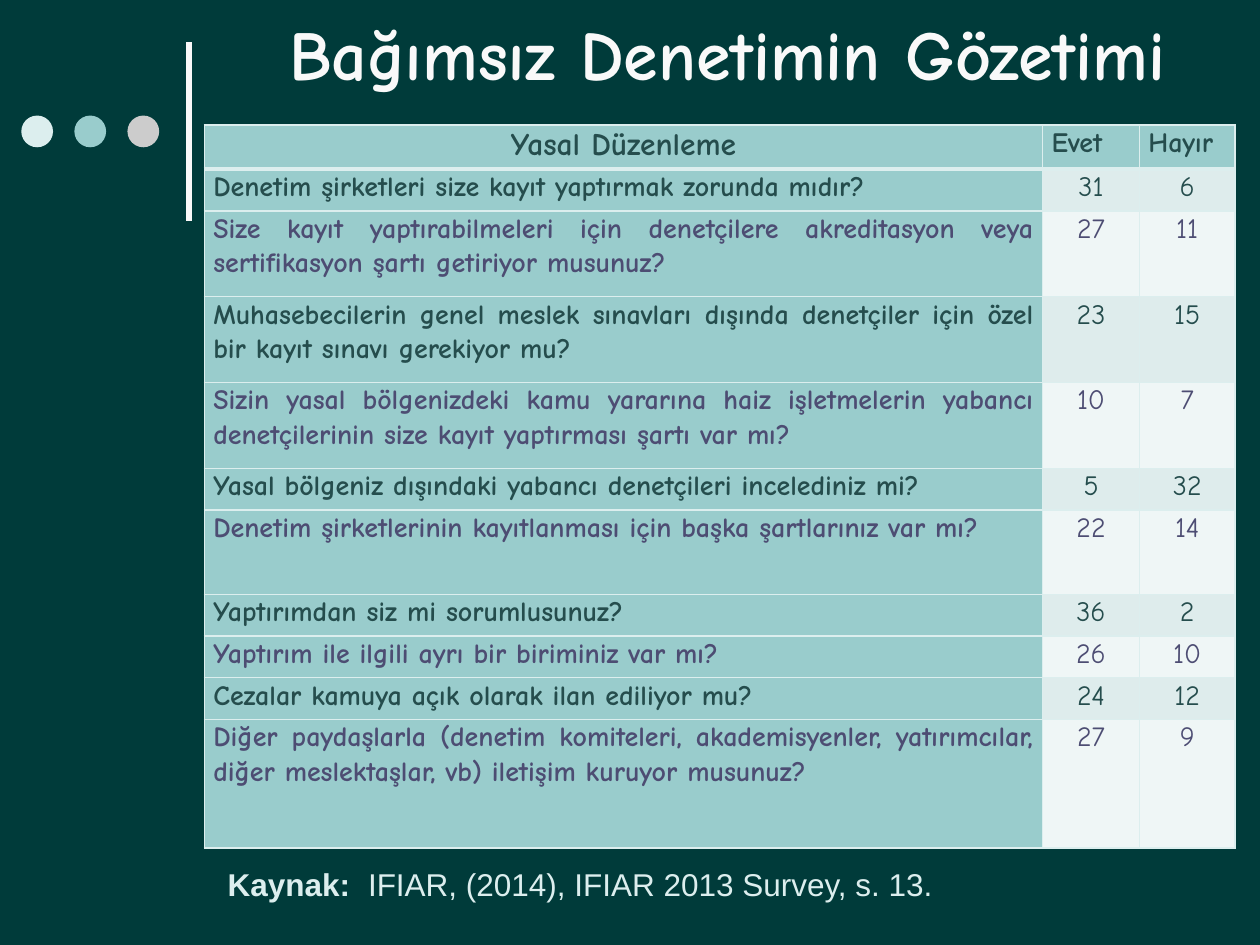
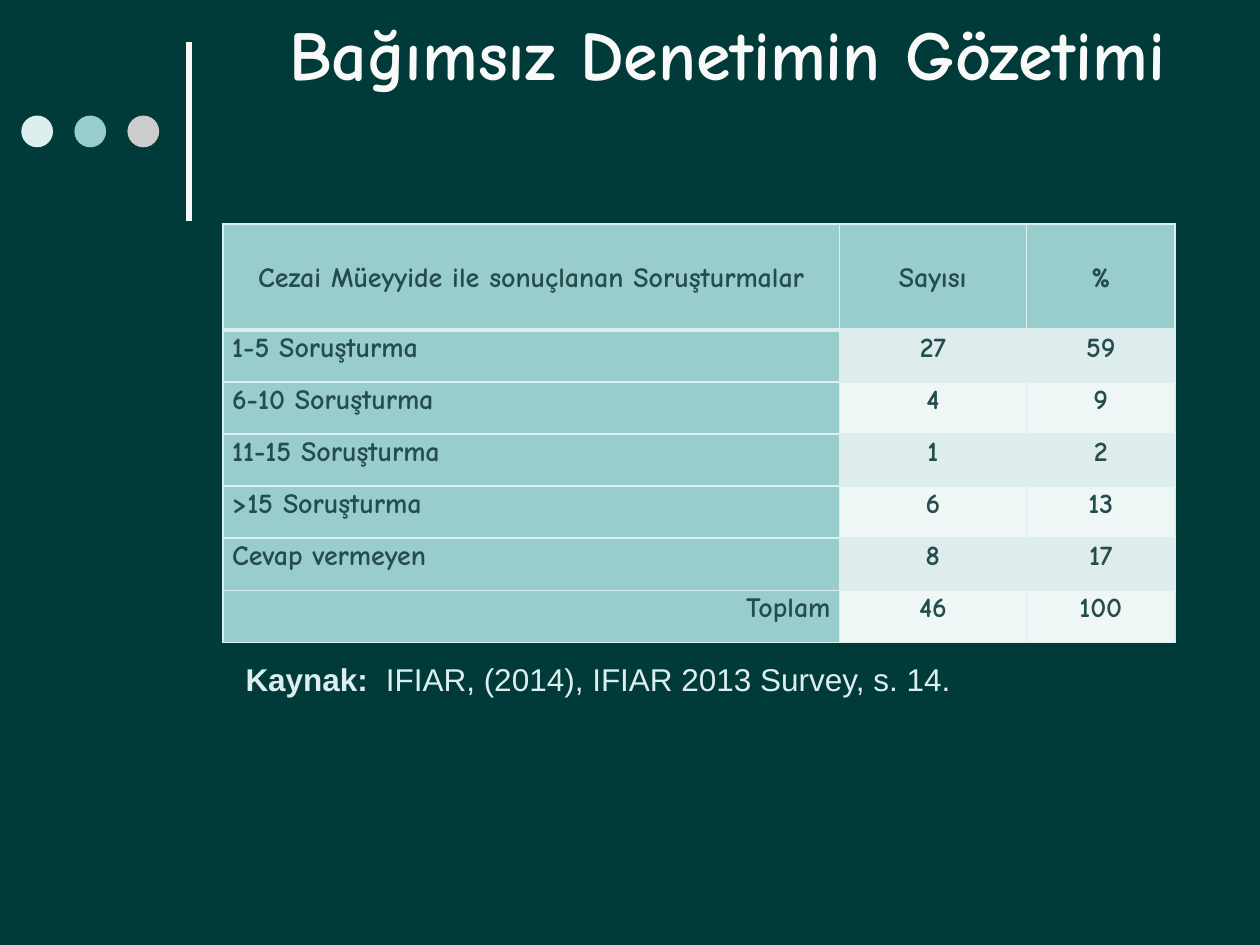
from lxml import etree
from pptx import Presentation
from pptx.dml.color import RGBColor
from pptx.enum.shapes import MSO_CONNECTOR as Connector, MSO_SHAPE as Shape
from pptx.enum.text import MSO_ANCHOR as Anchor, PP_ALIGN as Align
from pptx.oxml.ns import qn
from pptx.util import Cm, Pt

COLORS = {
    "background": "003B3A",
    "title": "F9F9F9",
    "pale": "DCEEEE",
    "teal": "99CCCC",
    "gray": "CCCCCC",
    "dark": "254D4D",
    "purple": "4D4D73",
    "band_odd": "DEECEC",
    "band_even": "EFF6F6",
}
HAND_FONT = "Comic Neue"
SOURCE_FONT = "Arial"
TITLE = "Bağımsız Denetimin Gözetimi"
LINE_SPACING = 1.07

REGULATION_HEADER = ("Yasal Düzenleme", "Evet", "Hayır")
REGULATION_ROWS = [
    ("Denetim şirketleri size kayıt yaptırmak zorunda mıdır?", 31, 6),
    ("Size kayıt yaptırabilmeleri için denetçilere akreditasyon veya "
     "sertifikasyon şartı getiriyor musunuz?", 27, 11),
    ("Muhasebecilerin genel meslek sınavları dışında denetçiler için özel "
     "bir kayıt sınavı gerekiyor mu?", 23, 15),
    ("Sizin yasal bölgenizdeki kamu yararına haiz işletmelerin yabancı "
     "denetçilerinin size kayıt yaptırması şartı var mı?", 10, 7),
    ("Yasal bölgeniz dışındaki yabancı denetçileri incelediniz mi?", 5, 32),
    ("Denetim şirketlerinin kayıtlanması için başka şartlarınız var mı?", 22, 14),
    ("Yaptırımdan siz mi sorumlusunuz?", 36, 2),
    ("Yaptırım ile ilgili ayrı bir biriminiz var mı?", 26, 10),
    ("Cezalar kamuya açık olarak ilan ediliyor mu?", 24, 12),
    ("Diğer paydaşlarla (denetim komiteleri, akademisyenler, yatırımcılar, "
     "diğer meslektaşlar, vb) iletişim kuruyor musunuz?", 27, 9),
]
REGULATION_HEIGHTS = [0.89, 0.84, 1.73, 1.73, 1.73, 0.84, 1.7, 0.84, 0.84, 0.84, 2.59]

INQUIRY_HEADER = ("Cezai Müeyyide ile sonuçlanan Soruşturmalar", "Sayısı", "%")
INQUIRY_ROWS = [
    ("1-5 Soruşturma", 27, 59),
    ("6-10 Soruşturma", 4, 9),
    ("11-15 Soruşturma", 1, 2),
    (">15 Soruşturma", 6, 13),
    ("Cevap vermeyen", 8, 17),
    ("Toplam", 46, 100),
]
INQUIRY_HEIGHTS = [2.13] + [1.05] * len(INQUIRY_ROWS)


def rgb(name):
    return RGBColor.from_string(COLORS[name])


def fill_solid(target, color):
    target.fill.solid()
    target.fill.fore_color.rgb = rgb(color)


def format_font(font, name, size, color, bold):
    font.name = name
    font.size = Pt(size)
    font.bold = bold
    font.color.rgb = rgb(color)


def add_text_box(slide, left, top, width, height):
    box = slide.shapes.add_textbox(Cm(left), Cm(top), Cm(width), Cm(height))
    box.text_frame.word_wrap = True
    return box.text_frame


def add_decoration(slide):
    line = slide.shapes.add_connector(
        Connector.STRAIGHT, Cm(3.81), Cm(4.45), Cm(3.81), Cm(0.84))
    line.line.color.rgb = rgb("title")
    line.line.width = Pt(3)
    etree.SubElement(line._element.spPr, qn("a:effectLst"))
    for index, color in enumerate(("pale", "teal", "gray")):
        dot = slide.shapes.add_shape(
            Shape.OVAL, Cm(0.43 + 1.07 * index), Cm(2.33), Cm(0.64), Cm(0.64))
        dot.shadow.inherit = False
        fill_solid(dot, color)
        dot.line.fill.background()


def add_title(slide):
    text_frame = add_text_box(slide, 4.11, 0, 21.11, 2.13)
    text_frame.vertical_anchor = Anchor.MIDDLE
    text_frame.text = TITLE
    paragraph = text_frame.paragraphs[0]
    paragraph.alignment = Align.CENTER
    format_font(paragraph.runs[0].font, HAND_FONT, 40, "title", True)


def add_titled_slide(presentation):
    slide = presentation.slides.add_slide(presentation.slide_layouts[6])
    fill_solid(slide.background, "background")
    add_decoration(slide)
    add_title(slide)
    return slide


def add_source(slide, left, top, width, citation, line_spacing):
    paragraph = add_text_box(slide, left, top, width, 1.05).paragraphs[0]
    paragraph.line_spacing = line_spacing
    tabs = etree.SubElement(paragraph._p.get_or_add_pPr(), qn("a:tabLst"))
    etree.SubElement(tabs, qn("a:tab"), pos=str(Cm(2.83)), algn="l")
    for text, bold in (("Kaynak:", True), ("\t" + citation, False)):
        run = paragraph.add_run()
        run.text = text
        format_font(run.font, SOURCE_FONT, 18, "pale", bold)


def set_borders(cell, top, bottom):
    properties = cell._tc.get_or_add_tcPr()
    for tag, width in (("lnL", 1), ("lnR", 1), ("lnT", top), ("lnB", bottom)):
        border = etree.SubElement(properties, qn("a:" + tag), w=str(Pt(width)))
        solid = etree.SubElement(border, qn("a:solidFill"))
        etree.SubElement(solid, qn("a:srgbClr"), val=COLORS["pale"])


def format_cell(cell, value, alignment, size=16, color="dark", bold=True):
    cell.margin_left = cell.margin_right = Cm(0.18)
    cell.margin_top = cell.margin_bottom = 0
    cell.text_frame.text = str(value)
    paragraph = cell.text_frame.paragraphs[0]
    paragraph.alignment = alignment
    paragraph.line_spacing = LINE_SPACING
    format_font(paragraph.runs[0].font, HAND_FONT, size, color, bold)


def add_survey_table(slide, left, top, widths, heights, header, rows,
                     even_color="dark", bold_values=True):
    frame = slide.shapes.add_table(
        len(heights), len(widths), Cm(left), Cm(top), Cm(sum(widths)), Cm(sum(heights)))
    table = frame.table
    table.first_row = table.horz_banding = False
    for column, width in zip(table.columns, widths):
        column.width = Cm(width)
    for row, height in zip(table.rows, heights):
        row.height = Cm(height)
    for row_index, values in enumerate([header, *rows]):
        even = row_index % 2 == 0
        for column_index, value in enumerate(values):
            cell = table.cell(row_index, column_index)
            set_borders(cell, 3 if row_index == 1 else 1, 3 if row_index == 0 else 1)
            if row_index == 0:
                fill_solid(cell, "teal")
                format_cell(cell, value, Align.CENTER)
                continue
            color = even_color if even else "dark"
            if column_index == 0:
                fill_solid(cell, "teal")
                format_cell(cell, value, Align.JUSTIFY, color=color)
            else:
                fill_solid(cell, "band_even" if even else "band_odd")
                format_cell(cell, value, Align.CENTER, color=color, bold=bold_values)
    return table


def add_regulation_slide(presentation):
    slide = add_titled_slide(presentation)
    table = add_survey_table(
        slide, 4.12, 2.52, [16.9, 1.95, 1.93], REGULATION_HEIGHTS,
        REGULATION_HEADER, REGULATION_ROWS, even_color="purple", bold_values=False)
    heading, *answers = table.rows[0].cells
    heading.text_frame.paragraphs[0].runs[0].font.size = Pt(18)
    for cell in answers:
        cell.text_frame.paragraphs[0].alignment = Align.JUSTIFY
    add_source(slide, 4.34, 17.32, 20.62, "IFIAR, (2014), IFIAR 2013 Survey, s. 13.", 1)


def add_inquiry_slide(presentation):
    slide = add_titled_slide(presentation)
    table = add_survey_table(
        slide, 4.5, 4.52, [12.42, 3.77, 3], INQUIRY_HEIGHTS,
        INQUIRY_HEADER, INQUIRY_ROWS)
    for cell in table.rows[0].cells:
        cell.vertical_anchor = Anchor.MIDDLE
    total_label = table.cell(len(INQUIRY_ROWS), 0)
    total_label.text_frame.paragraphs[0].alignment = Align.RIGHT
    add_source(slide, 4.7, 13.13, 19, "IFIAR, (2014), IFIAR 2013 Survey, s. 14.",
               LINE_SPACING)


def main():
    presentation = Presentation()
    presentation.slide_width = Cm(25.4)
    presentation.slide_height = Cm(19.05)
    add_regulation_slide(presentation)
    add_inquiry_slide(presentation)
    presentation.save("out.pptx")


if __name__ == "__main__":
    main()
